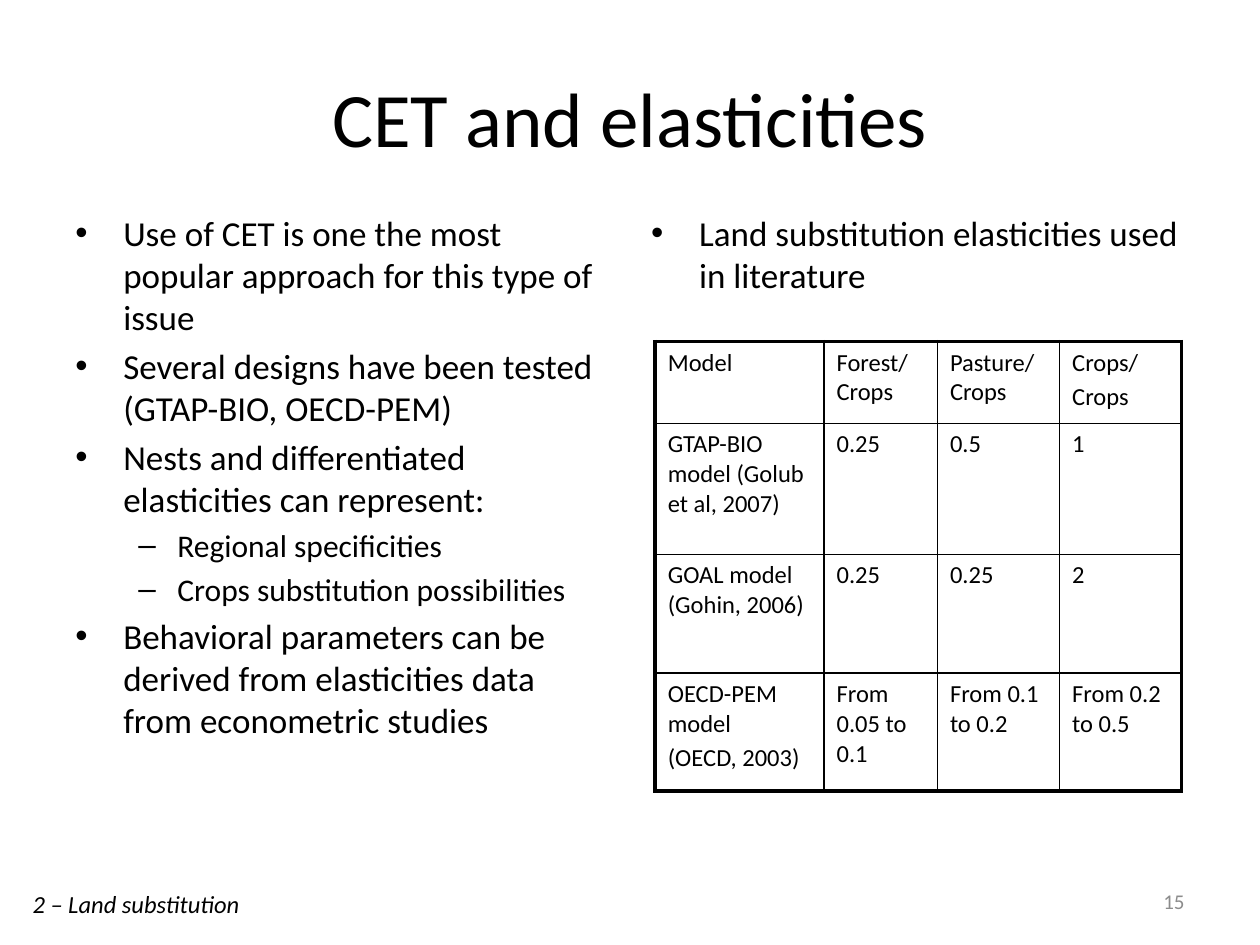
import pptx
import pptx.util
import pptx.dml.color
import pptx.enum.text
import pptx.oxml
import pptx.oxml.ns
import lxml.etree

Inches = pptx.util.Inches
Pt = pptx.util.Pt
Align = pptx.enum.text.PP_ALIGN
Anchor = pptx.enum.text.MSO_ANCHOR
qn = pptx.oxml.ns.qn

INK = "000000"
GREY = "8C8C8C"
# Bullet levels: character, left margin and hanging indent in inches, text size
LEVELS = [("•", 0.38, 0.38, 20), ("–", 0.81, 0.31, 18)]
APPROACH = [
    (0, "Use of CET is one the most popular approach for this type of issue"),
    (0, "Several designs have been tested (GTAP-BIO, OECD-PEM)"),
    (0, "Nests and differentiated elasticities can represent:"),
    (1, "Regional specificities"),
    (1, "Crops substitution possibilities"),
    (0, "Behavioral parameters can be derived from elasticities data "
        "from econometric studies"),
]
LITERATURE = [(0, "Land substitution elasticities used in literature")]
# In a cell, \v breaks a line and \n starts a paragraph
ELASTICITIES = [
    ["Model", "Forest/\vCrops", "Pasture/\vCrops", "Crops/\nCrops"],
    ["GTAP-BIO model (Golub et al, 2007)", "0.25", "0.5", "1"],
    ["GOAL model (Gohin, 2006)", "0.25", "0.25", "2"],
    ["OECD-PEM model\n(OECD, 2003)", "From 0.05 to 0.1", "From 0.1 to 0.2",
     "From 0.2 to 0.5"],
]
COLUMN_WIDTHS = [1.34, 0.9, 0.97, 0.97]
ROW_HEIGHTS = [0.65, 1.04, 0.94, 0.94]


def color(value):
    return pptx.dml.color.RGBColor.from_string(value)


def style(para, size, ink=INK, italic=False):
    formats = {"name": "Calibri", "size": Pt(size), "italic": italic}
    for span in para.runs:
        for name, value in formats.items():
            setattr(span.font, name, value)
        span.font.color.rgb = color(ink)
    # Line breaks carry their own size
    for line_break in para._p.findall(qn("a:br")):
        lxml.etree.SubElement(line_break, qn("a:rPr"), sz=str(size * 100))


def add_text_box(page, box, anchor=Anchor.TOP, wrap=True):
    frame = page.shapes.add_textbox(*map(Inches, box)).text_frame
    frame.word_wrap = wrap
    frame.vertical_anchor = anchor
    return frame


def add_line(page, box, text, size, align, anchor=Anchor.MIDDLE, wrap=True,
             ink=INK, italic=False):
    para = add_text_box(page, box, anchor, wrap).paragraphs[0]
    para.text = text
    para.alignment = align
    style(para, size, ink, italic)


def add_bullets(page, box, items):
    frame = add_text_box(page, box)
    for index, (level, text) in enumerate(items):
        para = frame.add_paragraph() if index else frame.paragraphs[0]
        mark, margin, hang, size = LEVELS[level]
        para.text = text
        para.level = level
        para.space_before = Pt(0.2 * size)
        style(para, size)
        props = para._p.get_or_add_pPr()
        props.set("marL", str(Inches(margin)))
        props.set("indent", str(-Inches(hang)))
        lxml.etree.SubElement(props, qn("a:buFont"), typeface="Arial")
        lxml.etree.SubElement(props, qn("a:buChar"), char=mark)


def set_borders(cell, widths):
    props = cell._tc.get_or_add_tcPr()
    for index, (side, width) in enumerate(widths.items()):
        line = lxml.etree.Element(qn(f"a:ln{side}"), w=str(Pt(width)))
        fill = lxml.etree.SubElement(line, qn("a:solidFill"))
        lxml.etree.SubElement(fill, qn("a:srgbClr"), val=INK)
        props.insert(index, line)


def add_elasticity_table(page, box):
    row_count, column_count = len(ROW_HEIGHTS), len(COLUMN_WIDTHS)
    table = page.shapes.add_table(row_count, column_count,
                                  *map(Inches, box)).table
    table.first_row = table.horz_banding = False
    for column, width in zip(table.columns, COLUMN_WIDTHS):
        column.width = Inches(width)
    for row, height in zip(table.rows, ROW_HEIGHTS):
        row.height = Inches(height)
    for r, texts in enumerate(ELASTICITIES):
        for c, text in enumerate(texts):
            cell = table.cell(r, c)
            cell.fill.background()
            cell.text = text
            for para in cell.text_frame.paragraphs:
                para.space_before = Pt(2.8)
                style(para, 14)
            # Thick outer frame, thin inner grid
            outer = {"L": c == 0, "R": c == column_count - 1,
                     "T": r == 0, "B": r == row_count - 1}
            set_borders(cell, {side: 2.25 if edge else 1
                               for side, edge in outer.items()})


def main():
    deck = pptx.Presentation()
    deck.slide_width, deck.slide_height = Inches(10), Inches(7.5)
    page = deck.slides.add_slide(deck.slide_layouts[6])

    # Title
    add_line(page, (0.5, 0.3, 9, 1.25), "CET and elasticities", 44,
             Align.CENTER)
    # Two columns of bullets, with the table under the right one
    add_bullets(page, (0.5, 1.63, 4.42, 5.4), APPROACH)
    add_bullets(page, (5.07, 1.63, 4.42, 5.4), LITERATURE)
    add_elasticity_table(page, (5.2, 2.71, sum(COLUMN_WIDTHS),
                                sum(ROW_HEIGHTS)))
    # Footer
    add_line(page, (7.17, 6.95, 2.33, 0.4), "15", 12, Align.RIGHT, ink=GREY)
    add_line(page, (0.16, 7.01, 2.01, 0.34), "2 – Land substitution", 14,
             Align.LEFT, Anchor.TOP, wrap=False, italic=True)

    deck.save("out.pptx")


if __name__ == "__main__":
    main()
